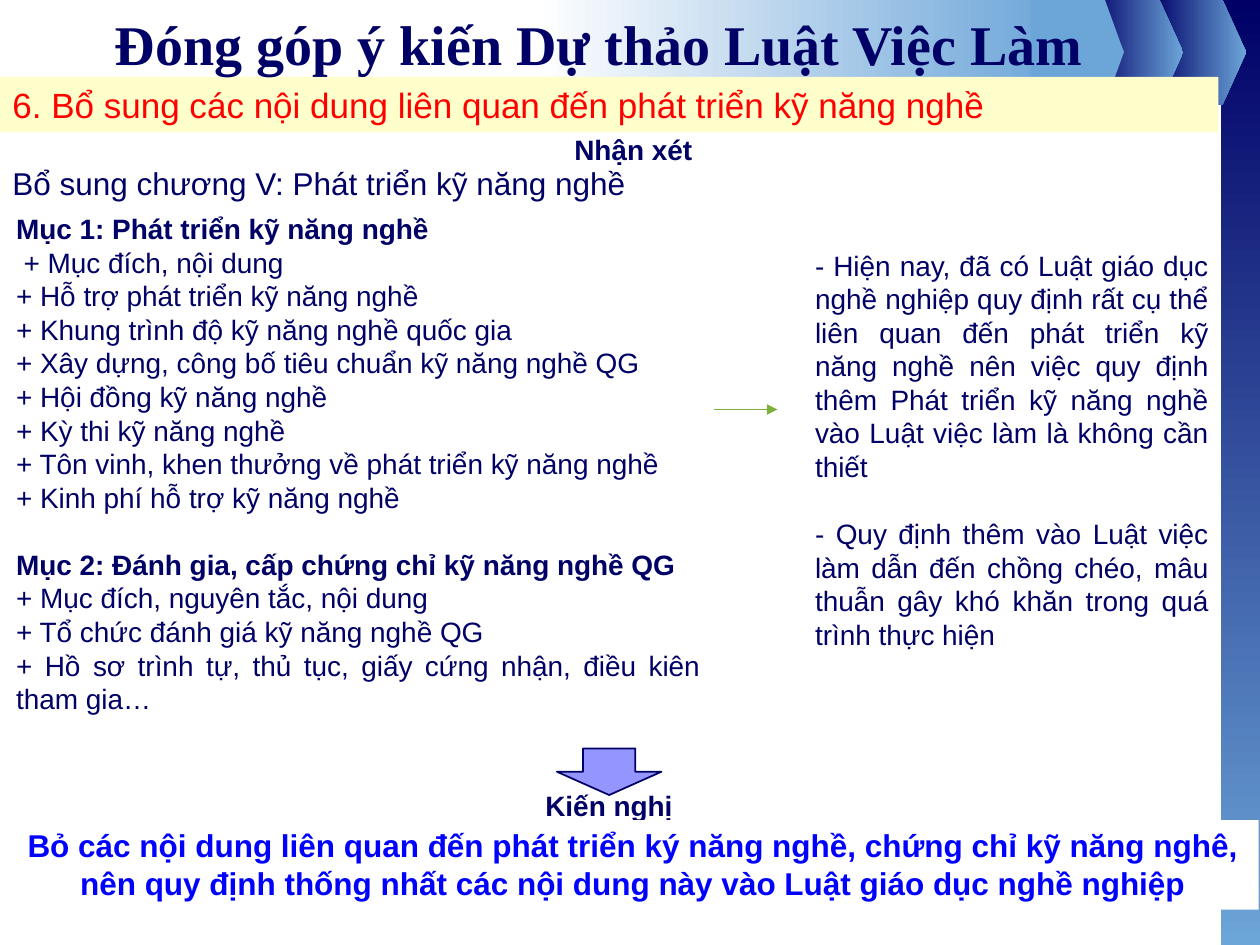
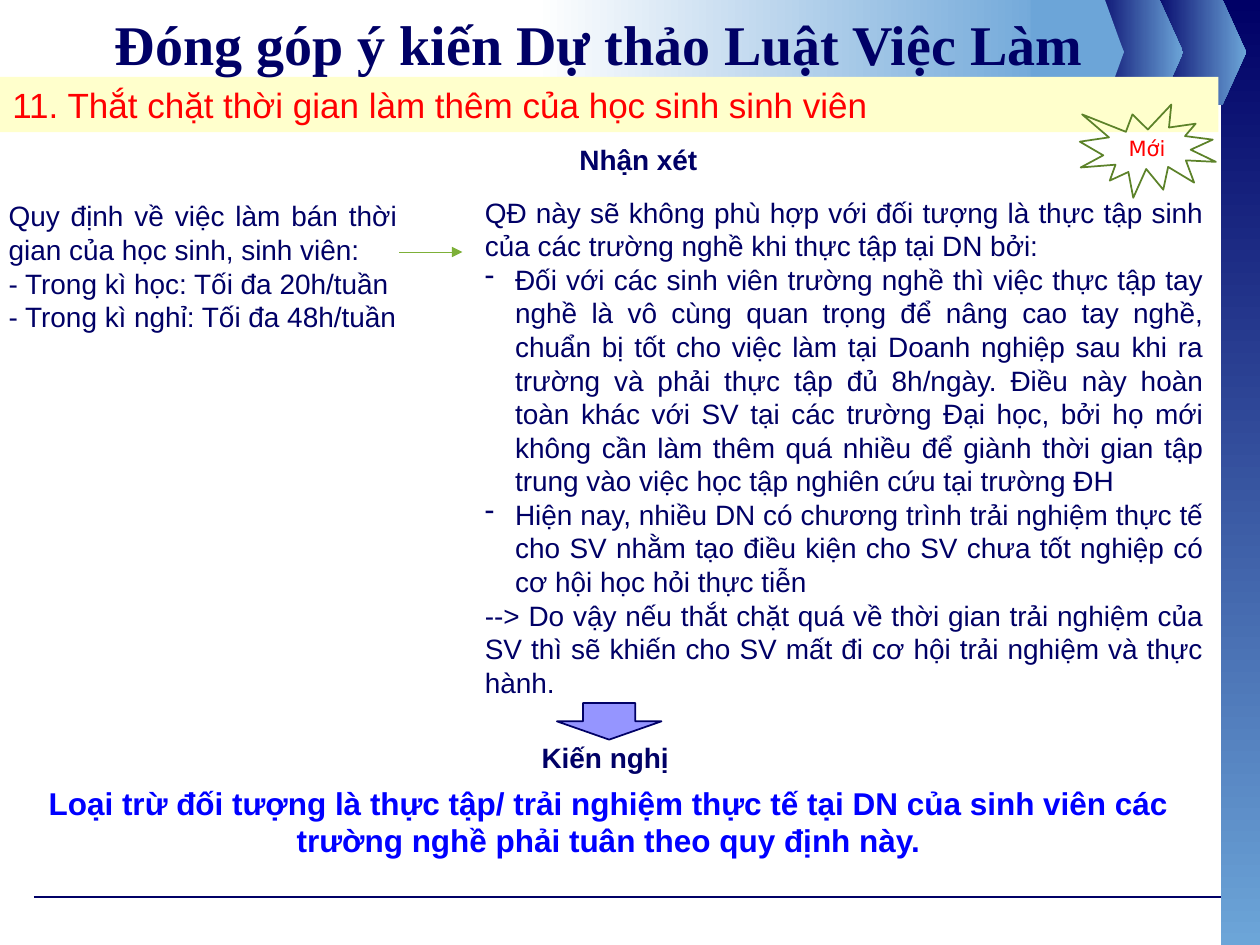
from dataclasses import dataclass

from lxml import etree
from pptx import Presentation
from pptx.dml.color import RGBColor
from pptx.enum.shapes import MSO_CONNECTOR as CONN, MSO_SHAPE as SHAPE
from pptx.enum.text import MSO_ANCHOR as ANCHOR, PP_ALIGN as ALIGN
from pptx.oxml.ns import qn
from pptx.util import Inches, Pt


@dataclass(frozen=True)
class Theme:
    navy: str = "000066"
    sky: str = "6CA5D8"
    white: str = "FFFFFF"
    cream: str = "FFFFCC"
    red: str = "FF0000"
    blue: str = "0000FF"
    lilac: str = "9595FF"
    green: str = "7DB038"
    dark_green: str = "5C8229"
    body_font: str = "Arial"
    title_font: str = "Times New Roman"
    badge_font: str = "DejaVu Sans"
    title: int = 32
    heading: int = 20
    lead: int = 18
    body: int = 16
    badge: int = 12
    leading: float = 1.2


@dataclass(frozen=True)
class Para:
    """A paragraph that differs from its neighbours in weight, indent or gap."""
    text: str
    bold: bool = False
    bullet: str = ""
    indent: float = 0
    gap_lines: int = 0


TITLE = "Đóng góp ý kiến Dự thảo Luật Việc Làm"


class Deck:
    def __init__(self, theme):
        self.theme = theme
        self.prs = Presentation()
        self.prs.slide_width, self.prs.slide_height = Inches(10), Inches(7.5)
        self.s = None

    def new_slide(self, heading, ruled=False, align=ALIGN.LEFT):
        t = self.theme
        self.s = self.prs.slides.add_slide(self.prs.slide_layouts[6])
        if ruled:
            self.line((0.27, 7.12), (9.69, 7.12), t.navy, 0.75)
        self.shape(SHAPE.RECTANGLE, (9.69, 0, 0.31, 7.5), (t.navy, t.sky), angle=270)
        for left in (9.14, 8.64):
            self.plate((left, 0, 0.75, 0.83), (t.navy, t.sky))
        self.plate((8.32, 0, 0.6, 0.83), t.sky)
        self.shape(SHAPE.RECTANGLE, (4.25, 0, 4.18, 0.83), (t.white, t.sky))
        self.plate((8.18, 0, 0.74, 0.82), t.sky)
        band = self.shape(SHAPE.RECTANGLE, (0, 0.61, 9.67, 0.44), t.cream)
        self.set_text(band, [heading], size=t.heading, color=t.red, align=align)
        self.text((0.67, 0.03, 8.17, 0.62), [TITLE], size=t.title, bold=True,
                  font=t.title_font, align=ALIGN.CENTER, anchor=ANCHOR.MIDDLE)

    def shape(self, kind, at, fill=None, outline=None, angle=0):
        """Draw a preset shape; a pair of fill colours makes a gradient."""
        sp = self.s.shapes.add_shape(kind, *map(Inches, at))
        sp.shadow.inherit = False
        if fill is None:
            sp.fill.background()
        elif isinstance(fill, tuple):
            sp.fill.gradient()
            sp.fill.gradient_angle = angle
            for stop, color in zip(sp.fill.gradient_stops, fill):
                stop.color.rgb = RGBColor.from_string(color)
        else:
            sp.fill.solid()
            sp.fill.fore_color.rgb = RGBColor.from_string(fill)
        if outline:
            sp.line.color.rgb = RGBColor.from_string(outline)
            sp.line.width = Pt(1)
        else:
            sp.line.fill.background()
        return sp

    def plate(self, at, fill):
        self.shape(SHAPE.PENTAGON, at, fill).adjustments[0] = 0.25

    def line(self, start, end, color, width, arrow=False):
        cx = self.s.shapes.add_connector(CONN.STRAIGHT, *map(Inches, start + end))
        cx.line.color.rgb = RGBColor.from_string(color)
        cx.line.width = Pt(width)
        props = cx.element.spPr
        if arrow:
            etree.SubElement(props.find(qn("a:ln")), qn("a:tailEnd"), type="triangle")
        etree.SubElement(props, qn("a:effectLst"))

    def arrow_right(self, left, top):
        self.line((left, top), (left + 0.5, top), self.theme.green, 0.5, arrow=True)

    def arrow_down(self, top, height):
        self.shape(SHAPE.DOWN_ARROW, (4.42, top, 0.83, height),
                   self.theme.lilac, self.theme.navy)

    def text(self, at, paras, **style):
        self.set_text(self.s.shapes.add_textbox(*map(Inches, at)), paras, **style)

    def label(self, left, top, width, text):
        self.text((left, top, width, 0.37), [text], bold=True, wrap=False)

    def set_text(self, sp, paras, size=None, color=None, font=None, bold=False,
                 align=ALIGN.LEFT, anchor=ANCHOR.TOP, wrap=True):
        t, tf = self.theme, sp.text_frame
        size = size or t.body
        tf.word_wrap, tf.vertical_anchor = wrap, anchor
        for i, para in enumerate(paras):
            if isinstance(para, str):
                para = Para(para, bold)
            p = tf.paragraphs[0] if i == 0 else tf.add_paragraph()
            if para.indent:
                pPr = p._p.get_or_add_pPr()
                pPr.set("marL", str(Inches(para.indent)))
                if para.bullet:
                    pPr.set("indent", str(-Inches(para.indent)))
                    etree.SubElement(pPr, qn("a:buChar"), char=para.bullet)
            p.alignment = align
            p.line_spacing = Pt(size * t.leading)
            if para.gap_lines:
                p.space_before = Pt(size * t.leading * para.gap_lines)
            r = p.add_run()
            r.text = para.text
            look = {"name": font or t.body_font, "size": Pt(size), "bold": para.bold}
            for key, value in look.items():
                setattr(r.font, key, value)
            r.font.color.rgb = RGBColor.from_string(color or t.navy)


def skills_slide(deck):
    t = deck.theme
    deck.new_slide("6. Bổ sung các nội dung liên quan đến phát triển kỹ năng nghề",
                   align=ALIGN.JUSTIFY)
    deck.text((0, 1.25, 5.42, 0.4), ["Bổ sung chương V: Phát triển kỹ năng nghề"],
              size=t.lead)
    deck.text((0.03, 1.63, 5.63, 4.14), [
        Para("Mục 1: Phát triển kỹ năng nghề", bold=True),
        Para("+ Mục đích, nội dung", indent=0.06),
        "+ Hỗ trợ phát triển kỹ năng nghề",
        "+ Khung trình độ kỹ năng nghề quốc gia",
        "+ Xây dựng, công bố tiêu chuẩn kỹ năng nghề QG",
        "+ Hội đồng kỹ năng nghề",
        "+ Kỳ thi kỹ năng nghề",
        "+ Tôn vinh, khen thưởng về phát triển kỹ năng nghề",
        "+ Kinh phí hỗ trợ kỹ năng nghề",
        Para("Mục 2: Đánh gia, cấp chứng chỉ kỹ năng nghề QG", bold=True, gap_lines=1),
        "+ Mục đích, nguyên tắc, nội dung",
        "+ Tổ chức đánh giá kỹ năng nghề QG",
        "+ Hồ sơ trình tự, thủ tục, giấy cứng nhận, điều kiên tham gia…",
    ], align=ALIGN.JUSTIFY)
    deck.arrow_right(5.67, 3.25)
    deck.text((6.37, 1.92, 3.32, 3.33), [
        "- Hiện nay, đã có Luật giáo dục nghề nghiệp quy định rất cụ thể liên quan "
        "đến phát triển kỹ năng nghề nên việc quy định thêm Phát triển kỹ năng nghề "
        "vào Luật việc làm là không cần thiết",
        Para("- Quy định thêm vào Luật việc làm dẫn đến chồng chéo, mâu thuẫn gây "
             "khó khăn trong quá trình thực hiện", gap_lines=1),
    ], align=ALIGN.JUSTIFY)
    deck.arrow_down(5.94, 0.37)
    deck.label(4.23, 6.21, 1.22, "Kiến nghị")
    proposal = deck.shape(SHAPE.RECTANGLE, (0.06, 6.51, 9.93, 0.71), t.white)
    deck.set_text(proposal, [
        "Bỏ các nội dung liên quan đến phát triển ký năng nghề, chứng chỉ kỹ năng nghê, "
        "nên quy định thống nhất các nội dung này vào Luật giáo dục nghề nghiệp",
    ], size=t.lead, color=t.blue, bold=True, align=ALIGN.CENTER)
    deck.label(4.46, 1, 1.15, "Nhận xét")


def overtime_slide(deck):
    t = deck.theme
    deck.new_slide("11. Thắt chặt thời gian làm thêm của học sinh sinh viên", ruled=True)
    deck.text((0.17, 6.17, 9.32, 0.71), [
        "Loại trừ đối tượng là thực tập/ trải nghiệm thực tế tại DN của sinh viên các "
        "trường nghề phải tuân theo quy định này.",
    ], size=t.lead, color=t.blue, bold=True, align=ALIGN.CENTER)
    badge = deck.shape(SHAPE.EXPLOSION1, (8.57, 0.83, 1.08, 0.74), outline=t.dark_green)
    deck.set_text(badge, ["Mới"], size=t.badge, color=t.red, font=t.badge_font,
                  align=ALIGN.CENTER, anchor=ANCHOR.MIDDLE)
    deck.label(4.5, 1.08, 1.15, "Nhận xét")
    deck.text((-0.03, 1.53, 3.28, 1.45), [
        "Quy định về việc làm bán thời gian của học sinh, sinh viên:",
        "- Trong kì học: Tối đa 20h/tuần",
        "- Trong kì nghỉ: Tối đa 48h/tuần",
    ], align=ALIGN.JUSTIFY)
    deck.arrow_right(3.17, 2)
    deck.text((3.75, 1.5, 5.9, 4.14), [
        "QĐ này sẽ không phù hợp với đối tượng là thực tập sinh của các trường nghề "
        "khi thực tập tại DN bởi:",
        Para("Đối với các sinh viên trường nghề thì việc thực tập tay nghề là vô cùng "
             "quan trọng để nâng cao tay nghề, chuẩn bị tốt cho việc làm tại Doanh nghiệp "
             "sau khi ra trường và phải thực tập đủ 8h/ngày. Điều này hoàn toàn khác với "
             "SV tại các trường Đại học, bởi họ mới không cần làm thêm quá nhiều để giành "
             "thời gian tập trung vào việc học tập nghiên cứu tại trường ĐH",
             bullet="-", indent=0.24),
        Para("Hiện nay, nhiều DN có chương trình trải nghiệm thực tế cho SV nhằm tạo "
             "điều kiện cho SV chưa tốt nghiệp có cơ hội học hỏi thực tiễn",
             bullet="-", indent=0.24),
        "--> Do vậy nếu thắt chặt quá về thời gian trải nghiệm của SV thì sẽ khiến cho "
        "SV mất đi cơ hội trải nghiệm và thực hành.",
    ], align=ALIGN.JUSTIFY)
    deck.arrow_down(5.58, 0.29)
    deck.label(4.2, 5.83, 1.22, "Kiến nghị")


def main():
    deck = Deck(Theme())
    skills_slide(deck)
    overtime_slide(deck)
    deck.prs.save("out.pptx")


if __name__ == "__main__":
    main()
